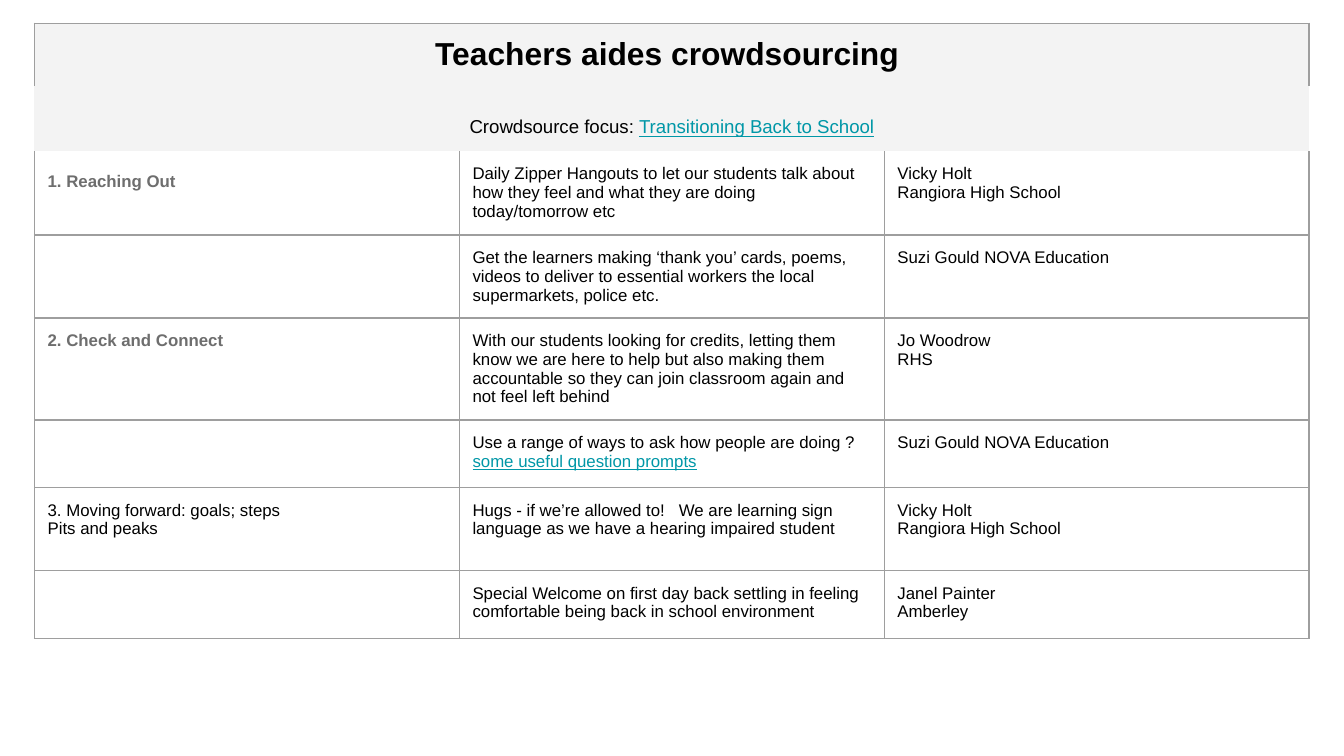
from lxml import etree
from pptx import Presentation
from pptx import util as u
from pptx.dml.color import RGBColor
from pptx.enum import text
from pptx.oxml.ns import qn

COLORS = {"ink": "000000", "heading": "6E6E6E", "link": "0097A7",
          "band": "F3F3F3", "border": "9E9E9E"}
FONT = "Arial"

# Run styles: size, colour, bold, underline
STYLES = {
    "title": (17, "ink", True, False),
    "focus": (10, "ink", False, False),
    "focus link": (10, "link", False, True),
    "heading": (9, "heading", True, False),
    "body": (9, "ink", False, False),
    "link": (9, "link", False, True),
}

# Full-width header rows, as runs of (text, style)
HEADERS = [
    [("Teachers aides crowdsourcing ", "title")],
    [("Crowdsource focus: ", "focus"), ("Transitioning Back to School", "focus link")],
]

# Ideas: each cell is a list of paragraphs; a paragraph is body text or a list of runs
IDEAS = [
    ([[("1. Reaching Out", "heading")]],
     ["Daily Zipper Hangouts to let our students talk about how they feel "
      "and what they are doing today/tomorrow etc"],
     ["Vicky Holt", "Rangiora High School"]),
    ([],
     ["Get the learners making ‘thank you’ cards, poems, videos to deliver to "
      "essential workers the local supermarkets, police etc."],
     ["Suzi Gould NOVA Education"]),
    ([[("2. Check and Connect", "heading")]],
     ["With our students looking for credits, letting them know we are here to help "
      "but also making them accountable so they can join classroom again and "
      "not feel left behind"],
     ["Jo Woodrow", "RHS"]),
    ([],
     [[("Use a range of ways to ask how people are doing ? ", "body"),
       ("some useful question prompts", "link")]],
     ["Suzi Gould NOVA Education"]),
    (["3. Moving forward: goals; steps", "Pits and peaks"],
     ["Hugs - if we’re allowed to!   We are learning sign language "
      "as we have a hearing impaired student"],
     ["Vicky Holt", "Rangiora High School"]),
    ([],
     ["Special Welcome on first day back settling in feeling comfortable "
      "being back in school environment"],
     ["Janel Painter", "Amberley"]),
]

LEFT, TOP, COLUMN_WIDTH = 0.65, 0.44, 8.03
ROW_HEIGHTS = [1.19, 1.23, 1.58, 1.57, 1.93, 1.23, 1.57, 1.22]
MARGIN = u.Cm(0.25)
# Drawn sides of the first rows; later rows have all four
ROW_SIDES = ["LRT", "", "LRB"]


def set_borders(cell, sides):
    properties = cell._tc.get_or_add_tcPr()
    for side in "LRTB":
        line = etree.SubElement(properties, qn("a:ln" + side), w=str(u.Pt(0.75)))
        if side in sides:
            fill = etree.SubElement(line, qn("a:solidFill"))
            etree.SubElement(fill, qn("a:srgbClr"), val=COLORS["border"])
        else:
            etree.SubElement(line, qn("a:noFill"))


def write(cell, paragraphs):
    frame = cell.text_frame
    for index, content in enumerate(paragraphs):
        paragraph = frame.add_paragraph() if index else frame.paragraphs[0]
        runs = [(content, "body")] if isinstance(content, str) else content
        for words, style in runs:
            size, color, bold, underline = STYLES[style]
            run = paragraph.add_run()
            run.text = words
            font = run.font
            font.name, font.size = FONT, u.Pt(size)
            font.bold, font.underline = bold, underline
            font.color.rgb = RGBColor.from_string(COLORS[color])


presentation = Presentation()
presentation.slide_width, presentation.slide_height = u.Cm(25.4), u.Cm(14.29)
slide = presentation.slides.add_slide(presentation.slide_layouts[6])

# Table grid
table = slide.shapes.add_table(
    len(ROW_HEIGHTS), 3, u.Cm(LEFT), u.Cm(TOP),
    u.Cm(3 * COLUMN_WIDTH), u.Cm(sum(ROW_HEIGHTS))).table
table.first_row = table.horz_banding = False
for column in table.columns:
    column.width = u.Cm(COLUMN_WIDTH)
for index, (row, height) in enumerate(zip(table.rows, ROW_HEIGHTS)):
    row.height = u.Cm(height)
    sides = ROW_SIDES[index] if index < len(ROW_SIDES) else "LRTB"
    for cell in row.cells:
        cell.margin_left = cell.margin_right = MARGIN
        cell.margin_top = cell.margin_bottom = MARGIN
        set_borders(cell, sides)
        if index < len(HEADERS):
            cell.fill.solid()
            cell.fill.fore_color.rgb = RGBColor.from_string(COLORS["band"])
        else:
            cell.fill.background()

# Header rows
for index, runs in enumerate(HEADERS):
    cell = table.cell(index, 0)
    cell.merge(table.cell(index, 2))
    write(cell, [runs])
    cell.text_frame.paragraphs[0].alignment = text.PP_ALIGN.CENTER
focus = table.cell(1, 0).text_frame.paragraphs[0]
focus.line_spacing, focus.space_before, focus.space_after = 1.85, u.Pt(14), u.Pt(8)

# Idea rows
for index, idea in enumerate(IDEAS, start=len(HEADERS)):
    for column, paragraphs in enumerate(idea):
        write(table.cell(index, column), paragraphs)
table.cell(len(HEADERS), 0).text_frame.paragraphs[0].line_spacing = 1.43

presentation.save("out.pptx")
